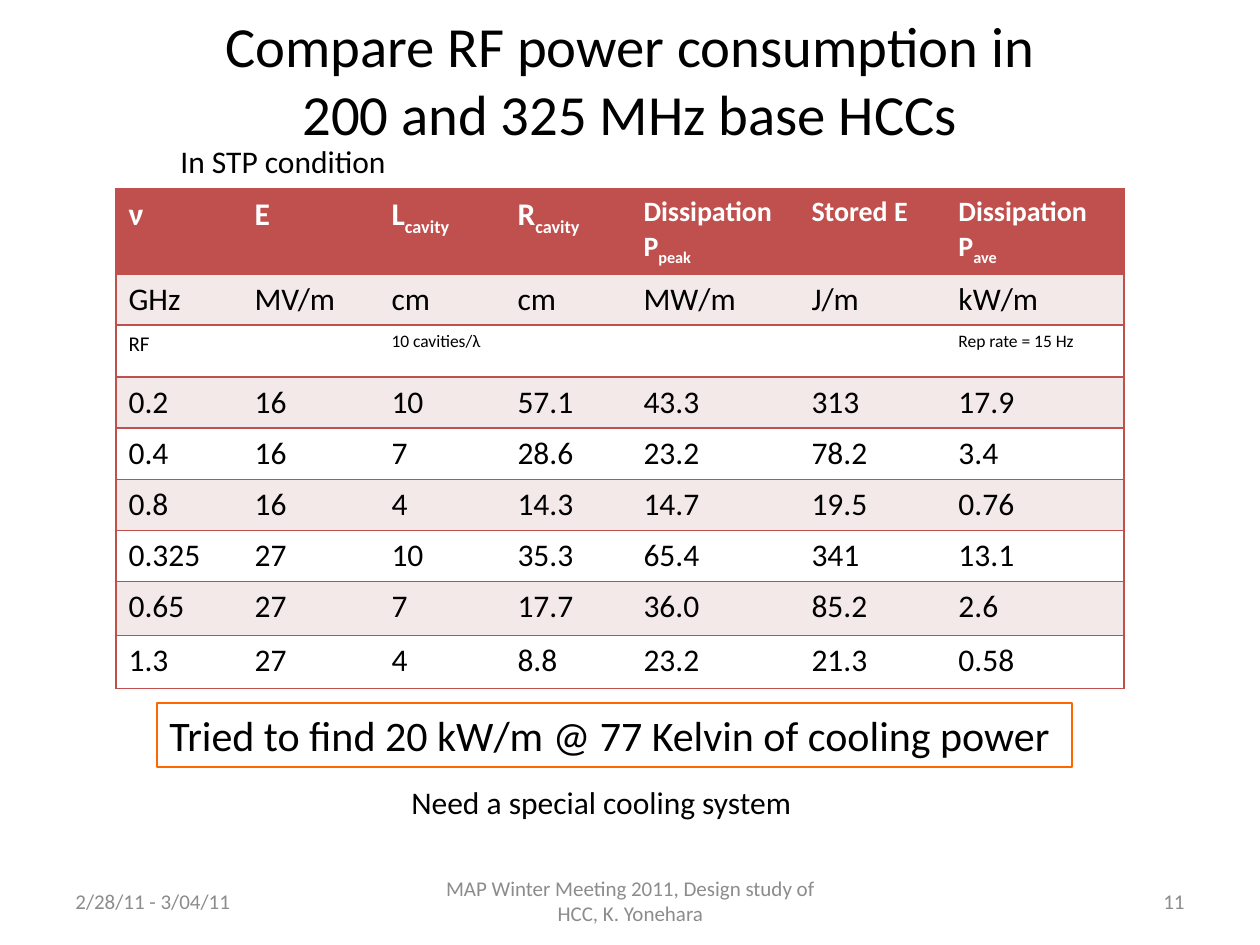
from lxml import etree
from pptx import Presentation
from pptx.dml.color import RGBColor
from pptx.enum.shapes import MSO_SHAPE
from pptx.enum.text import MSO_ANCHOR, MSO_AUTO_SIZE, PP_ALIGN
from pptx.oxml.ns import qn
from pptx.util import Emu, Pt

RECTANGLE = MSO_SHAPE.RECTANGLE
TOP, MIDDLE = MSO_ANCHOR.TOP, MSO_ANCHOR.MIDDLE
LEFT, CENTER, RIGHT = PP_ALIGN.LEFT, PP_ALIGN.CENTER, PP_ALIGN.RIGHT
NO_AUTOFIT = MSO_AUTO_SIZE.NONE
EMU_PER_INCH = 914400
PX_PER_INCH = 126

FONT = "Calibri"
BLACK, WHITE, GRAY = "000000", "FFFFFF", "8C8C8C"
RED, PINK, ORANGE = "C0504D", "F4E9E9", "FF6600"

COLUMN_WIDTHS = [126, 137, 126, 126, 168, 147, 178]
ROW_HEIGHTS = [85, 51, 52, 51, 51, 51, 51, 54, 53]
HEADER_SIZES = [18, 18, 18, 18, 16, 16, 16]
NOTE_SIZES = [12, 10, 10, 10, 10, 10, 10]
ROWS = [
    ["ν", "E", "L_cavity", "R_cavity", "Dissipation P_peak", "Stored E", "Dissipation P_ave"],
    ["GHz", "MV/m", "cm", "cm", "MW/m", "J/m", "kW/m"],
    ["RF", "", "10 cavities/λ", "", "", "", "Rep rate = 15 Hz"],
    ["0.2", "16", "10", "57.1", "43.3", "313", "17.9"],
    ["0.4", "16", "7", "28.6", "23.2", "78.2", "3.4"],
    ["0.8", "16", "4", "14.3", "14.7", "19.5", "0.76"],
    ["0.325", "27", "10", "35.3", "65.4", "341", "13.1"],
    ["0.65", "27", "7", "17.7", "36.0", "85.2", "2.6"],
    ["1.3", "27", "4", "8.8", "23.2", "21.3", "0.58"],
]


def px(length):
    return Emu(round(length * EMU_PER_INCH / PX_PER_INCH))


def color(hex_value):
    return RGBColor.from_string(hex_value)


def write_text(frame, text, size=18, fill=BLACK, bold=False, align=LEFT, anchor=TOP, wrap=True):
    frame.word_wrap = wrap
    frame.vertical_anchor = anchor
    paragraph = frame.paragraphs[0]
    paragraph.alignment = align
    for line_index, line in enumerate(text.split("\n")):
        if line_index:
            paragraph.add_line_break()
        for part_index, part in enumerate(line.split("_")):
            run = paragraph.add_run()
            run.text = part
            font = run.font
            font.name, font.size, font.bold = FONT, Pt(size), bold
            font.color.rgb = color(fill)
            if part_index:
                run.font._element.set("baseline", "-25000")


def add_label(slide, box, text, **text_format):
    shape = slide.shapes.add_textbox(*map(px, box))
    write_text(shape.text_frame, text, **text_format)


def add_title(slide, box, text):
    title = slide.shapes.title
    title.left, title.top, title.width, title.height = map(px, box)
    title.text_frame.auto_size = NO_AUTOFIT
    write_text(title.text_frame, text, size=32.4, align=CENTER, anchor=MIDDLE)


def add_callout(slide, box, text):
    shape = slide.shapes.add_shape(RECTANGLE, *map(px, box))
    shape.shadow.inherit = False
    shape.fill.background()
    shape.line.color.rgb = color(ORANGE)
    shape.line.width = Pt(1.5)
    write_text(shape.text_frame, text, size=24, wrap=False)


def set_borders(cell, sides):
    properties = cell._tc.get_or_add_tcPr()
    for side in ("lnL", "lnR", "lnT", "lnB"):
        line = etree.SubElement(properties, qn("a:" + side), w=str(Pt(1)))
        if side in sides:
            solid = etree.SubElement(line, qn("a:solidFill"))
            etree.SubElement(solid, qn("a:srgbClr"), val=RED)
        else:
            etree.SubElement(line, qn("a:noFill"))


def cell_format(row, column):
    if row == 0:
        return {"size": HEADER_SIZES[column], "fill": WHITE, "bold": True}
    if row == 2:
        return {"size": NOTE_SIZES[column]}
    return {"size": 18}


def add_power_table(slide, left, top):
    last = len(COLUMN_WIDTHS) - 1
    box = (left, top, sum(COLUMN_WIDTHS), sum(ROW_HEIGHTS))
    table = slide.shapes.add_table(len(ROWS), len(COLUMN_WIDTHS), *map(px, box)).table
    table.horz_banding = False
    for column, width in zip(table.columns, COLUMN_WIDTHS):
        column.width = px(width)
    for row, height in zip(table.rows, ROW_HEIGHTS):
        row.height = px(height)
    for row, texts in enumerate(ROWS):
        background = RED if row == 0 else PINK if row % 2 else WHITE
        for column, text in enumerate(texts):
            cell = table.cell(row, column)
            outer = {0: ["lnL"], last: ["lnR"]}.get(column, [])
            set_borders(cell, ["lnT", "lnB"] + outer)
            cell.fill.solid()
            cell.fill.fore_color.rgb = color(background)
            if text:
                write_text(cell.text_frame, text, **cell_format(row, column))


def main():
    presentation = Presentation()
    presentation.slide_width, presentation.slide_height = px(1260), px(945)
    slide = presentation.slides.add_slide(presentation.slide_layouts[5])
    add_title(slide, (63, 0, 1134, 158), "Compare RF power consumption in\n200 and 325 MHz base HCCs")
    add_power_table(slide, 116, 189)
    add_label(slide, (168, 136, 233, 51), "In STP condition", wrap=False)
    add_callout(slide, (157, 703, 915, 64), "Tried to find 20 kW/m @ 77 Kelvin of cooling power")
    add_label(slide, (399, 777, 410, 51), "Need a special cooling system", wrap=False)
    footer = {"size": 12, "fill": GRAY, "anchor": MIDDLE}
    add_label(slide, (63, 876, 294, 50), "2/28/11 - 3/04/11", **footer)
    add_label(slide, (431, 876, 399, 50),
              "MAP Winter Meeting 2011, Design study of HCC, K. Yonehara", align=CENTER, **footer)
    add_label(slide, (903, 876, 294, 50), "11", align=RIGHT, **footer)
    presentation.save("out.pptx")


if __name__ == "__main__":
    main()
